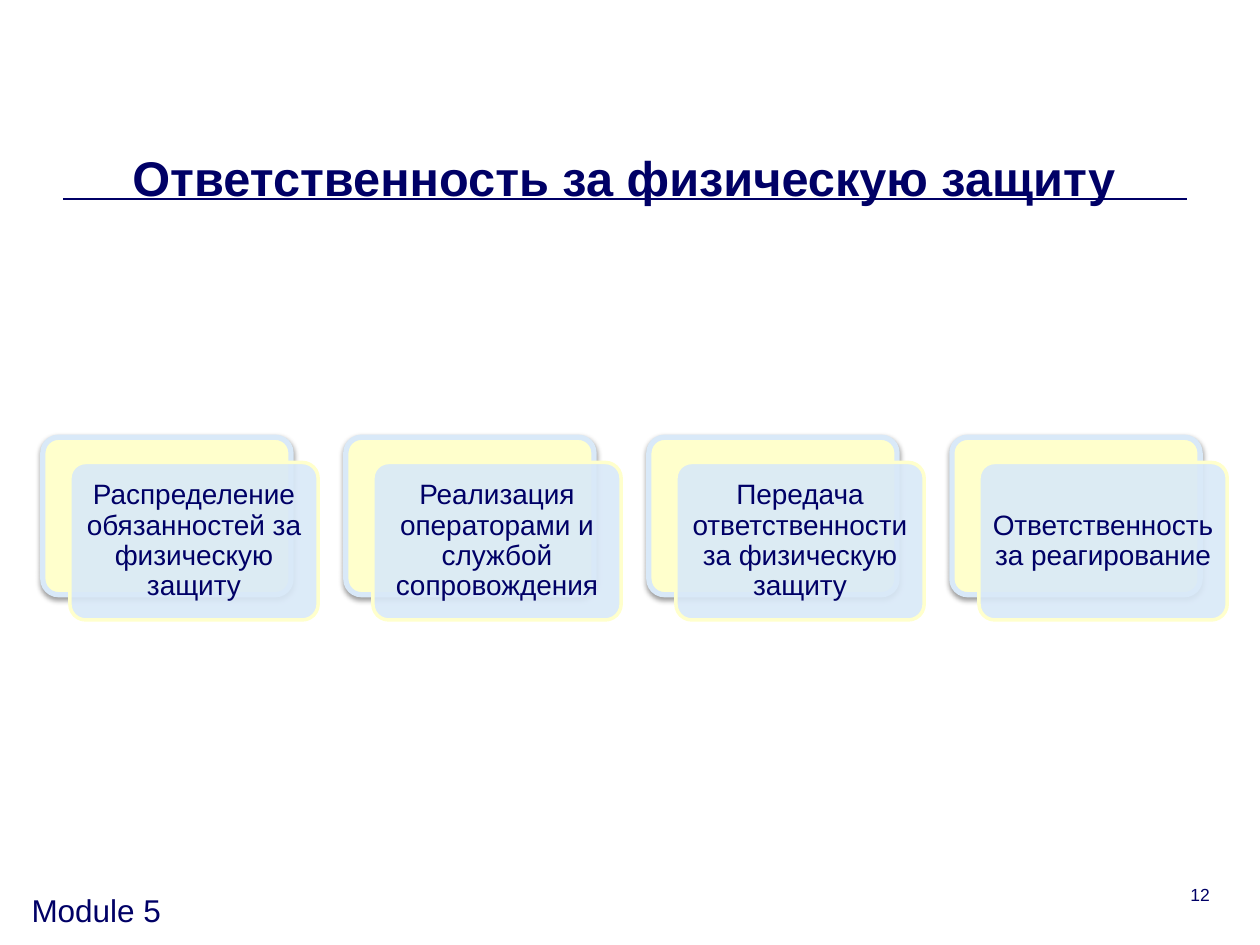
from dataclasses import dataclass

from lxml import etree
from pptx import Presentation
from pptx.dml.color import RGBColor
from pptx.enum.shapes import MSO_CONNECTOR, MSO_SHAPE
from pptx.enum.text import MSO_ANCHOR, PP_ALIGN
from pptx.oxml.ns import qn
from pptx.util import Inches, Pt

LEFT, CENTER, RIGHT = PP_ALIGN.LEFT, PP_ALIGN.CENTER, PP_ALIGN.RIGHT
TOP, MIDDLE = MSO_ANCHOR.TOP, MSO_ANCHOR.MIDDLE
ROUNDED = MSO_SHAPE.ROUNDED_RECTANGLE
STRAIGHT = MSO_CONNECTOR.STRAIGHT

SLIDE_WIDTH, SLIDE_HEIGHT = Inches(10), Inches(7.5)
COLUMNS, ROWS = 100, 75


@dataclass(frozen=True)
class Theme:
    font: str = "Arial"
    ink: str = "000066"
    cream: str = "FFFFCC"
    sky: str = "D9E9F8"
    shadow: str = "000000"
    title_size: float = 27.8
    footer_size: float = 18
    card_size: float = 16
    number_size: float = 10


@dataclass(frozen=True)
class Box:
    column: float
    row: float
    columns: float
    rows: float

    def shifted(self, columns: float, rows: float = 0) -> "Box":
        return Box(self.column + columns, self.row + rows, self.columns, self.rows)

    def extent(self) -> tuple[int, int, int, int]:
        return (across(self.column), down(self.row), across(self.columns), down(self.rows))


THEME = Theme()
FIRST_CARD = Box(3.4, 34.7, 19.7, 12.5)
CARD_PITCH = 24.05
FRONT_OFFSET = (2.15, 2)
CARDS = (
    "Распределение обязанностей за физическую защиту",
    "Реализация операторами и службой сопровождения",
    "Передача ответственности за физическую защиту",
    "Ответственность за реагирование",
)


def across(columns: float) -> int:
    return int(SLIDE_WIDTH * columns / COLUMNS)


def down(rows: float) -> int:
    return int(SLIDE_HEIGHT * rows / ROWS)


def write_text(shape, text: str, *, size: float, align=LEFT, anchor=TOP, bold=False,
               insets=(0.1, 0.05, 0.1, 0.05), line_spacing=1.0, space_after=0) -> None:
    frame = shape.text_frame
    frame.word_wrap = True
    frame.vertical_anchor = anchor
    frame.margin_left, frame.margin_top, frame.margin_right, frame.margin_bottom = map(Inches, insets)
    paragraph = frame.paragraphs[0]
    paragraph.alignment = align
    paragraph.line_spacing = line_spacing
    paragraph.space_after = Pt(space_after)
    run = paragraph.add_run()
    run.text = text
    run.font.name = THEME.font
    run.font.size = Pt(size)
    run.font.bold = bold
    run.font.color.rgb = RGBColor.from_string(THEME.ink)


def add_label(slide, box: Box, text: str, **text_format) -> None:
    write_text(slide.shapes.add_textbox(*box.extent()), text, **text_format)


def add_panel(slide, box: Box, fill: str, line: str, line_width: float):
    shape = slide.shapes.add_shape(ROUNDED, *box.extent())
    shape.adjustments[0] = 0.1
    shape.shadow.inherit = False
    shape.fill.solid()
    shape.fill.fore_color.rgb = RGBColor.from_string(fill)
    shape.line.color.rgb = RGBColor.from_string(line)
    shape.line.width = Pt(line_width)
    return shape


def set_alpha(color_element, percent: int) -> None:
    etree.SubElement(color_element, qn("a:alpha"), val=str(percent * 1000))


def add_drop_shadow(shape) -> None:
    effects = shape.element.spPr.find(qn("a:effectLst"))
    shadow = etree.SubElement(effects, qn("a:outerShdw"), blurRad=str(Pt(3.1)),
                              dist=str(Pt(1.6)), dir="5400000", rotWithShape="0")
    set_alpha(etree.SubElement(shadow, qn("a:srgbClr"), val=THEME.shadow), 38)


def add_card(slide, box: Box, text: str) -> None:
    back = add_panel(slide, box, THEME.cream, THEME.sky, 3)
    add_drop_shadow(back)
    front = add_panel(slide, box.shifted(*FRONT_OFFSET), THEME.sky, THEME.cream, 2)
    set_alpha(front.element.spPr.find(qn("a:solidFill"))[0], 90)
    write_text(front, text, size=THEME.card_size, align=CENTER, anchor=MIDDLE,
               insets=(0.07,) * 4, line_spacing=0.9)


def add_rule(slide, start: float, end: float, row: float) -> None:
    rule = slide.shapes.add_connector(STRAIGHT, across(start), down(row), across(end), down(row))
    rule.line.color.rgb = RGBColor.from_string(THEME.ink)
    rule.line.width = Pt(1)
    etree.SubElement(rule.element.spPr, qn("a:effectLst"))


def main() -> None:
    presentation = Presentation()
    presentation.slide_width, presentation.slide_height = SLIDE_WIDTH, SLIDE_HEIGHT
    slide = presentation.slides.add_slide(presentation.slide_layouts[6])
    add_rule(slide, 5, 94.2, 15.8)
    add_label(slide, Box(74.5, 69.7, 22.5, 4), "12", size=THEME.number_size, align=RIGHT)
    add_label(slide, Box(2.5, 10.8, 94.1, 5), "Ответственность за физическую защиту",
              size=THEME.title_size, align=CENTER, bold=True,
              insets=(0.1, 0.09, 0.1, 0), space_after=6)
    add_label(slide, Box(1.7, 70, 25.8, 5), "Module 5", size=THEME.footer_size,
              insets=(0.08, 0.07, 0.1, 0.05), space_after=6)
    for index, text in enumerate(CARDS):
        add_card(slide, FIRST_CARD.shifted(index * CARD_PITCH), text)
    presentation.save("out.pptx")


if __name__ == "__main__":
    main()
